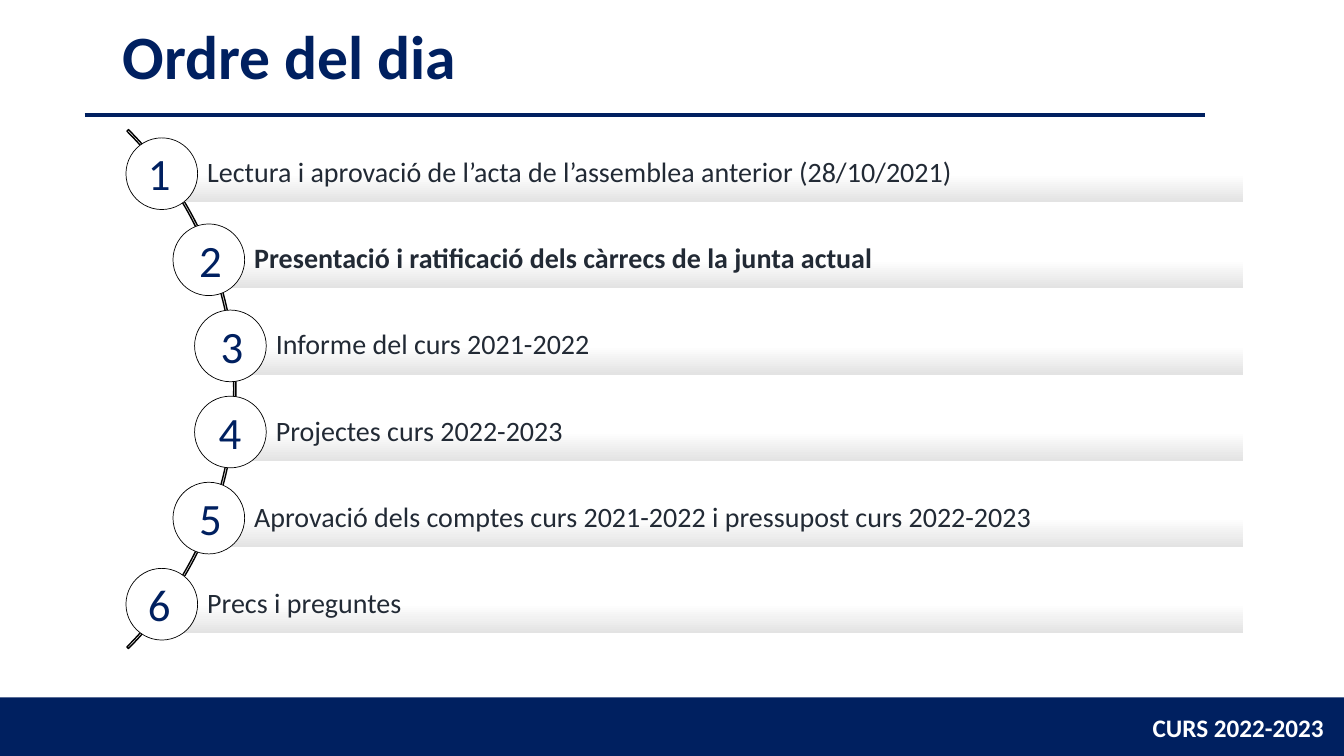
from pptx import Presentation
from pptx.dml.color import RGBColor
from pptx.enum.shapes import MSO_CONNECTOR as Connector, MSO_SHAPE as Shape
from pptx.enum.text import MSO_ANCHOR as Anchor, PP_ALIGN as Align
from pptx.oxml.ns import qn
from pptx.util import Pt
from lxml.etree import SubElement

COLOURS = {"navy": "002060", "ink": "222A35", "white": "FFFFFF",
           "grey": "E3E3E3", "black": "000000"}
TITLE = "Ordre del dia"
COURSE = "CURS 2022-2023"
# text, bold, circle left, number inset from circle, number box width
AGENDA = [
    ("Lectura i aprovació de l’acta de l’assemblea anterior (28/10/2021)", False, 90, 8.6, 27.4),
    ("Presentació i ratificació dels càrrecs de la junta actual", True, 123.6, 11.5, 27.4),
    ("Informe del curs 2021-2022", False, 139, 11.5, 30.2),
    ("Projectes curs 2022-2023", False, 139, 10, 27.4),
    ("Aprovació dels comptes curs 2021-2022 i pressupost curs 2022-2023", False, 123.6, 11.5, 27.4),
    ("Precs i preguntes", False, 90, 8.6, 27.4),
]
SLIDE_WIDTH, SLIDE_HEIGHT = 960, 540
FOOTER_TOP = 498.2
ROW_TOP, ROW_STEP = 98.5, 61.5
CIRCLE, BAR_HEIGHT, BAR_RIGHT = 51.2, 41, 887.8
ARC_BOX = (-355.7, 15.8, 524.2, 524.2)
ARC_ADJUSTMENTS = (189, 27, 0.003)


def colour(name):
    return RGBColor.from_string(COLOURS[name])


def add_shape(kind, box, fill=None, line=None, line_width=1):
    shape = slide.shapes.add_shape(kind, *map(Pt, box))
    shape.shadow.inherit = False
    if fill:
        shape.fill.solid()
        shape.fill.fore_color.rgb = colour(fill)
    else:
        shape.fill.background()
    if line:
        shape.line.color.rgb = colour(line)
        shape.line.width = Pt(line_width)
    else:
        shape.line.fill.background()
    return shape


def write(shape, text, size, ink, bold=False):
    paragraph = shape.text_frame.paragraphs[0]
    paragraph.text = text
    paragraph.alignment = Align.LEFT
    font = paragraph.runs[0].font
    formats = {"name": "Calibri", "size": Pt(size), "bold": bold}
    for name, value in formats.items():
        setattr(font, name, value)
    font.color.rgb = colour(ink)
    return paragraph


def add_text(box, text, size, ink, bold=False):
    text_box = slide.shapes.add_textbox(*map(Pt, box))
    text_box.text_frame.word_wrap = True
    write(text_box, text, size, ink, bold)


def add_bar(left, top, text, bold):
    bar = add_shape(Shape.RECTANGLE, (left, top, BAR_RIGHT - left, BAR_HEIGHT))
    bar.fill.gradient()
    bar.fill.gradient_angle = 270
    for stop, (position, name) in zip(bar.fill.gradient_stops, [(0.5, "white"), (1, "grey")]):
        stop.position = position
        stop.color.rgb = colour(name)
    frame_formats = {"word_wrap": True, "vertical_anchor": Anchor.MIDDLE,
                     "margin_left": Pt(32.4), "margin_right": Pt(4.3),
                     "margin_top": Pt(4.3), "margin_bottom": Pt(4.3)}
    for name, value in frame_formats.items():
        setattr(bar.text_frame, name, value)
    write(bar, text, 20, "ink", bold).line_spacing = 0.9


presentation = Presentation()
presentation.slide_width, presentation.slide_height = Pt(SLIDE_WIDTH), Pt(SLIDE_HEIGHT)
slide = presentation.slides.add_slide(presentation.slide_layouts[6])

add_shape(Shape.RECTANGLE, (0, FOOTER_TOP, SLIDE_WIDTH, SLIDE_HEIGHT - FOOTER_TOP), "navy")
add_text((816.2, 505.4, 143.8, 29), COURSE, 18, "white", True)
title_rule = slide.shapes.add_connector(Connector.STRAIGHT, Pt(60.5), Pt(82.2), Pt(861), Pt(82.2))
title_rule.line.color.rgb = colour("navy")
title_rule.line.width = Pt(3.5)
SubElement(title_rule._element.spPr, qn("a:effectLst"))
add_text((80.6, 9.4, 399.6, 60.5), TITLE, 44, "navy", True)

arc = add_shape(Shape.BLOCK_ARC, ARC_BOX, line="black")
for index, value in enumerate(ARC_ADJUSTMENTS):
    arc.adjustments[index] = value

for index, (text, bold, left, inset, number_width) in enumerate(AGENDA):
    top = ROW_TOP + index * ROW_STEP
    add_bar(left + CIRCLE / 2, top + (CIRCLE - BAR_HEIGHT) / 2, text, bold)
    add_shape(Shape.OVAL, (left, top, CIRCLE, CIRCLE), "white", "black", 0.5)
    add_text((left + inset, top + 2.3, number_width, 46), str(index + 1), 32, "navy")

presentation.save("out.pptx")
